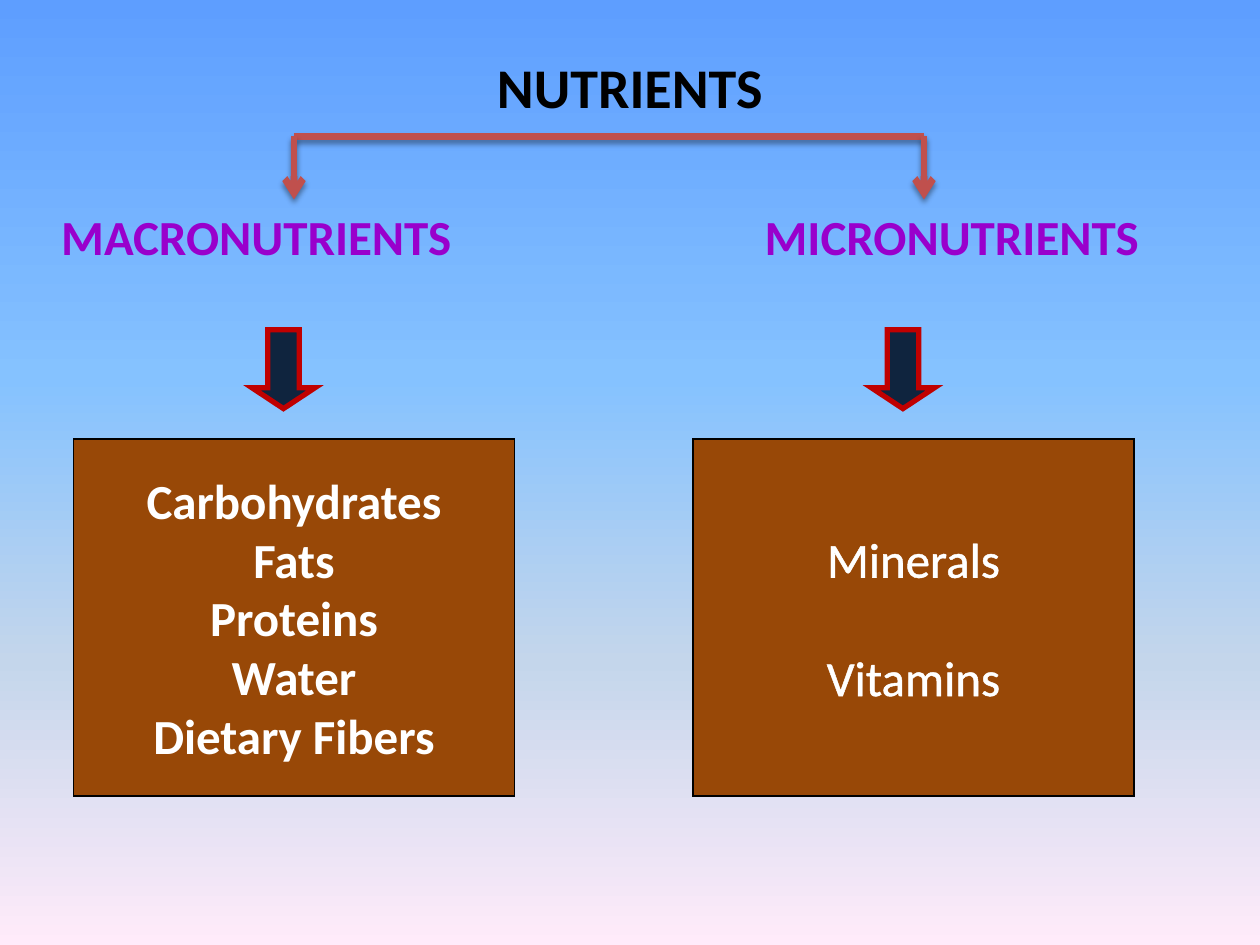
import pptx
import pptx.dml.color
import pptx.enum.shapes
import pptx.enum.text
import pptx.oxml
import pptx.oxml.ns
import pptx.util
from lxml import etree

Pt = pptx.util.Pt
RGB = pptx.dml.color.RGBColor
SHAPES = pptx.enum.shapes.MSO_SHAPE
ALIGN = pptx.enum.text.PP_ALIGN
ANCHOR = pptx.enum.text.MSO_ANCHOR
qn = pptx.oxml.ns.qn

BLACK = RGB(0x00, 0x00, 0x00)
WHITE = RGB(0xFF, 0xFF, 0xFF)
PURPLE = RGB(0x99, 0x00, 0xCC)
BROWN = RGB(0x98, 0x48, 0x07)
NAVY = RGB(0x0F, 0x24, 0x3E)
RED = RGB(0xC0, 0x00, 0x00)
BRICK = RGB(0xC0, 0x50, 0x4D)
SKY = (
    (0, RGB(0x5E, 0x9E, 0xFF)),
    (40, RGB(0x85, 0xC2, 0xFF)),
    (70, RGB(0xC4, 0xD6, 0xEB)),
    (100, RGB(0xFF, 0xEB, 0xFA)),
)

COLUMNS = (
    dict(heading="MACRONUTRIENTS", heading_left=35, bold=True, gap=0, outline=None,
         items=("Carbohydrates", "Fats", "Proteins", "Water", "Dietary Fibers")),
    dict(heading="MICRONUTRIENTS", heading_left=437, bold=False, gap=34, outline=WHITE,
         items=("Minerals", "Vitamins")),
)
COLUMN_LEFT, COLUMN_TOP, COLUMN_WIDTH, COLUMN_PITCH = 42, 115, 252, 354


def xml(tag, content="", attributes=""):
    namespace = pptx.oxml.ns.nsdecls("a")
    return pptx.oxml.parse_xml(f"<a:{tag} {namespace} {attributes}>{content}</a:{tag}>")


def write_text(frame, lines, size=28, color=WHITE, bold=True, align=ALIGN.CENTER,
               gap=0, outline=None):
    frame.word_wrap = False
    frame.vertical_anchor = ANCHOR.MIDDLE
    for index, line in enumerate(lines):
        paragraph = frame.add_paragraph() if index else frame.paragraphs[0]
        paragraph.alignment = align
        paragraph.space_before = Pt(gap if index else 0)
        run = paragraph.add_run()
        run.text = line
        run.font.name = "Calibri"
        run.font.size = Pt(size)
        run.font.bold = bold
        run.font.color.rgb = color
        if outline is not None:
            stroke = f'<a:solidFill><a:srgbClr val="{outline}"/></a:solidFill>'
            run.font._element.insert(0, xml("ln", stroke, f'w="{Pt(1.45)}"'))


def paint_background(slide):
    fill = slide.background.fill
    fill.gradient()
    fill.gradient_angle = 270
    stops = slide.background._cSld.find(".//" + qn("a:gsLst"))
    for stop in list(stops):
        stops.remove(stop)
    for position, color in SKY:
        stops.append(xml("gs", f'<a:srgbClr val="{color}"/>', f'pos="{position * 1000}"'))


def add_title(slide, left, top, width, height):
    title = slide.shapes.title
    title.left, title.top, title.width, title.height = map(Pt, (left, top, width, height))
    write_text(title.text_frame, ["NUTRIENTS"], size=32, color=BLACK)


def add_branch_line(slide, start, end, arrow=False):
    branch = slide.shapes.add_connector(
        pptx.enum.shapes.MSO_CONNECTOR.STRAIGHT, *map(Pt, (*start, *end)))
    branch.line.color.rgb = BRICK
    branch.line.width = Pt(3.82)
    if arrow:
        etree.SubElement(branch.line._get_or_add_ln(), qn("a:tailEnd"), type="arrow")
    shade = ('<a:outerShdw blurRad="39400" dist="25400" dir="5400000" rotWithShape="0">'
             '<a:srgbClr val="000000"><a:alpha val="38000"/></a:srgbClr></a:outerShdw>')
    branch._element.spPr.append(xml("effectLst", shade))


def add_branches(slide, left, top, width, height):
    right = left + width
    add_branch_line(slide, (left, top), (right, top))
    for x in (left, right):
        add_branch_line(slide, (x, top), (x, top + height), arrow=True)


def add_block(slide, preset, box, fill, line, line_width):
    block = slide.shapes.add_shape(preset, *map(Pt, box))
    block.shadow.inherit = False
    block.fill.solid()
    block.fill.fore_color.rgb = fill
    block.line.color.rgb = line
    block.line.width = Pt(line_width)
    etree.SubElement(block.line._get_or_add_ln(), qn("a:miter"), lim="800000")
    return block


def add_column(slide, left, top, width, heading, heading_left, items, **item_format):
    label = slide.shapes.add_textbox(Pt(heading_left), Pt(top), Pt(width), Pt(40))
    label.text_frame.margin_left = 0
    write_text(label.text_frame, [heading], color=PURPLE, align=ALIGN.LEFT)
    arrow = add_block(slide, SHAPES.DOWN_ARROW, (left + 102, top + 73.5, 36, 45),
                      NAVY, RED, 3)
    arrow.adjustments[1] = 0.33
    panel = add_block(slide, SHAPES.RECTANGLE, (left, top + 135.75, width, 204),
                      BROWN, BLACK, 1)
    write_text(panel.text_frame, items, **item_format)


def main():
    presentation = pptx.Presentation()
    presentation.slide_width, presentation.slide_height = Pt(720), Pt(540)
    slide = presentation.slides.add_slide(presentation.slide_layouts[5])
    paint_background(slide)
    add_title(slide, 0, 24, 720, 50)
    for index, column in enumerate(COLUMNS):
        add_column(slide, COLUMN_LEFT + index * COLUMN_PITCH, COLUMN_TOP, COLUMN_WIDTH,
                   **column)
    add_branches(slide, 168, 78, 360, 36)
    presentation.save("out.pptx")


if __name__ == "__main__":
    main()
